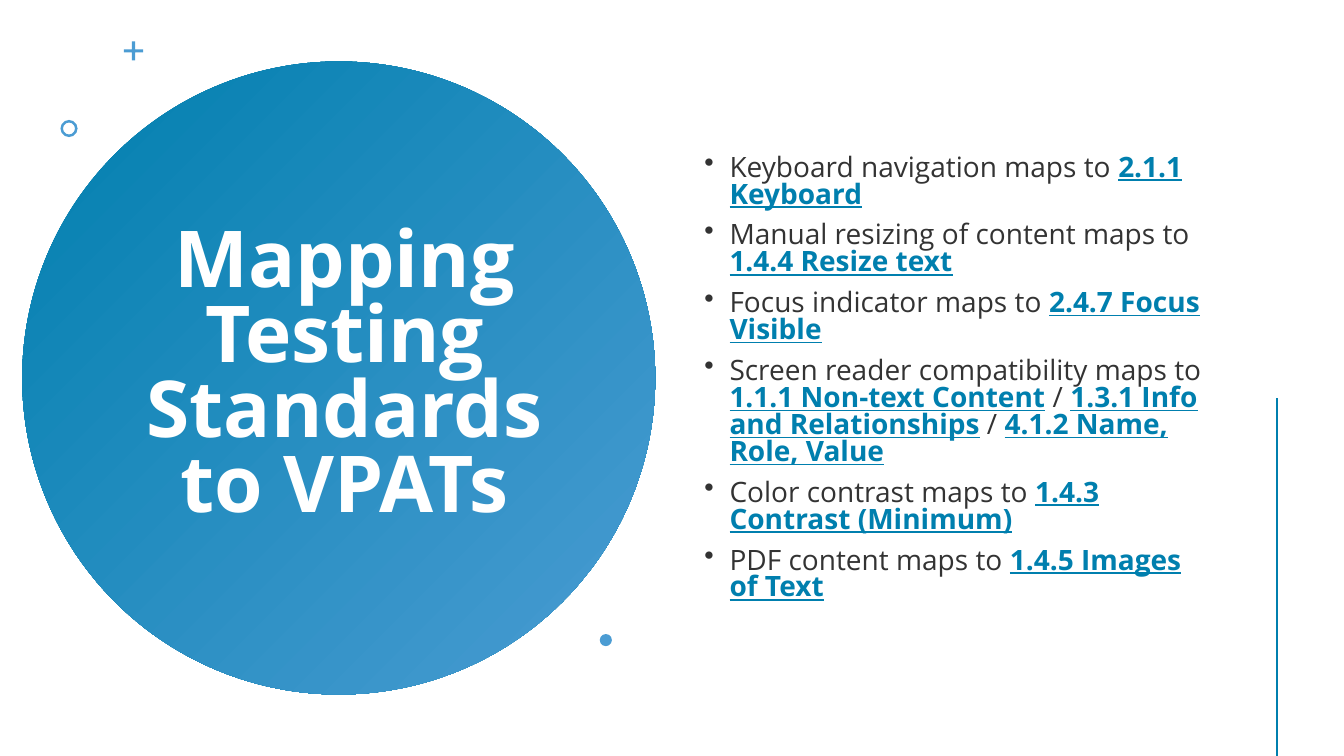
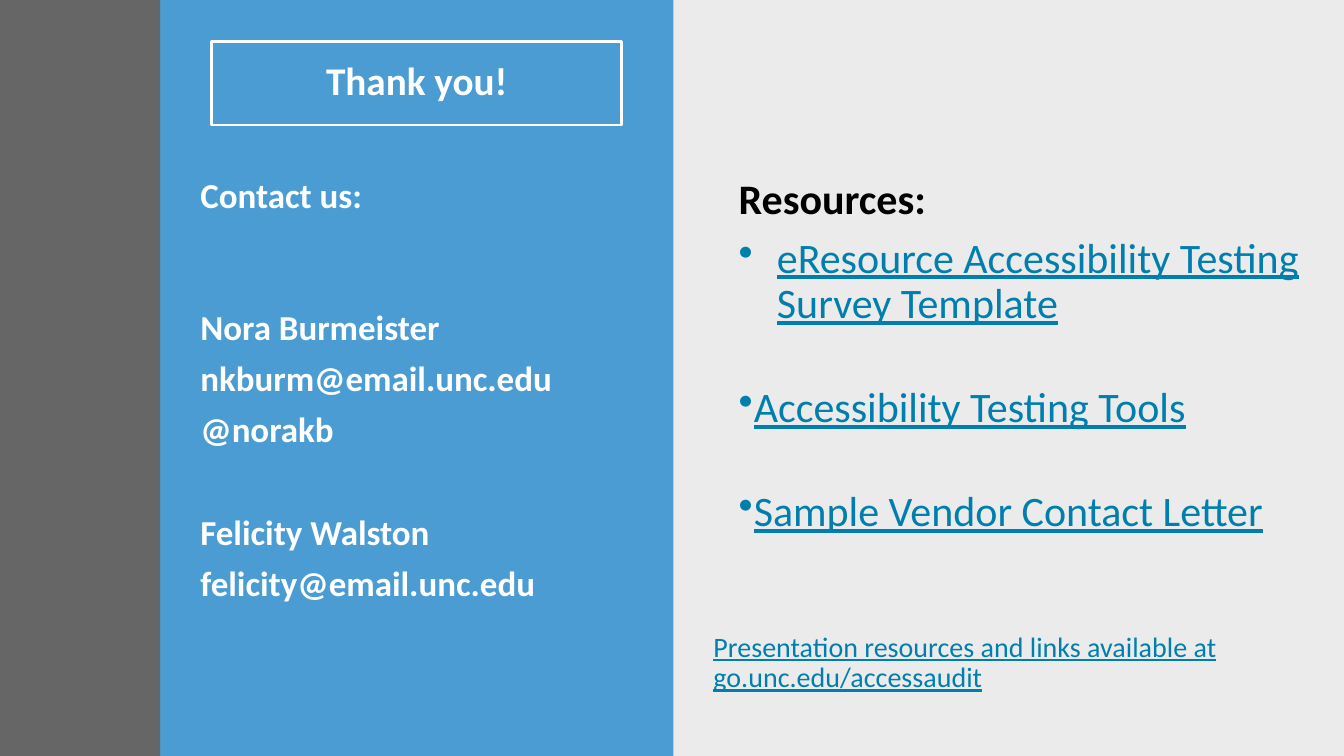
from pptx import Presentation
from pptx.dml.color import RGBColor
from pptx.enum.shapes import MSO_CONNECTOR, MSO_SHAPE
from pptx.enum.text import MSO_ANCHOR, MSO_AUTO_SIZE, PP_ALIGN
from pptx.oxml.ns import qn
from pptx.util import Inches, Pt
from lxml import etree

# Shared style
WHITE = RGBColor(0xFF, 0xFF, 0xFF)
BLACK = RGBColor(0, 0, 0)
INK = RGBColor(0x33, 0x33, 0x33)
GRAY = RGBColor(0x66, 0x66, 0x66)
PALE = RGBColor(0xEB, 0xEB, 0xEB)
SKY = RGBColor(0x4B, 0x9C, 0xD3)
TEAL = RGBColor(0x00, 0x7F, 0xAE)

W, H = Inches(13.333), Inches(7.5)
SLIDE = (0, 0, W, H)

OPEN = dict(name="Open Sans", size=Pt(20))
TITLE_OPEN = dict(name="Open Sans", size=Pt(56), bold=True, color=WHITE)
TITLE_CALIBRI = dict(name="Calibri", size=Pt(28), bold=True, color=WHITE)
CONTACT = dict(name="Calibri", size=Pt(25), bold=True, color=WHITE)
HEADING = dict(name="Calibri", size=Pt(30), bold=True, color=BLACK)
LINK = dict(name="Calibri", size=Pt(30), underline=True, color=TEAL)
PLAIN = dict(OPEN, color=INK)
STANDARD = dict(OPEN, bold=True, underline=True, color=TEAL)

# Slide 1: alternating plain text and standard names
MAPPINGS = [
    ["Keyboard navigation maps to ", "2.1.1 Keyboard"],
    ["Manual resizing of content maps to ", "1.4.4 Resize text"],
    ["Focus indicator maps to ", "2.4.7 Focus Visible"],
    ["Screen reader compatibility maps to ", "1.1.1 Non-text Content", " / ",
     "1.3.1 Info and Relationships", " / ", "4.1.2 Name, Role, Value"],
    ["Color contrast maps to ", "1.4.3 Contrast (Minimum)"],
    ["PDF content maps to ", "1.4.5 Images of Text"],
]

# Slide 2: text and space before
CONTACTS = [
    ("Contact us:", 0), ("Nora Burmeister", 67), ("nkburm@email.unc.edu", 9.5),
    ("@norakb", 9.5), ("Felicity Walston", 47), ("felicity@email.unc.edu", 9.5),
]
# Text, space before and hanging indent
RESOURCES = [
    ("eResource Accessibility Testing Survey Template", 9.5, 0.38),
    ("Accessibility Testing Tools", 42, 0.15),
    ("Sample Vendor Contact Letter", 42, 0.15),
]


def part(box, x, y, w, h):
    """Box inside another one, in percent of its width and height."""
    left, top, width, height = box
    return (int(left + width * x / 100), int(top + height * y / 100),
            int(width * w / 100), int(height * h / 100))


def add_shape(s, kind, box, color):
    sp = s.shapes.add_shape(kind, *box)
    sp.shadow.inherit = False
    sp.fill.solid()
    sp.fill.fore_color.rgb = color
    sp.line.fill.background()
    return sp


def add_text(s, box, anchor=MSO_ANCHOR.TOP):
    tf = s.shapes.add_textbox(*box).text_frame
    tf.word_wrap = True
    tf.vertical_anchor = anchor
    return tf


def add_runs(p, runs):
    for text, style in runs:
        r = p.add_run()
        r.text = text
        for key, value in style.items():
            if key == "color":
                r.font.color.rgb = value
            else:
                setattr(r.font, key, value)


def add_paragraph(tf, runs, before=0, hang=0, spacing=0.9):
    first = not tf.paragraphs[0].runs
    p = tf.paragraphs[0] if first else tf.add_paragraph()
    p.line_spacing = spacing
    p.space_before = Pt(0 if first else before)
    if hang:
        pPr = p._p.get_or_add_pPr()
        pPr.set("marL", str(Inches(hang)))
        pPr.set("indent", str(-Inches(hang)))
        etree.SubElement(pPr, qn("a:buChar")).set("char", "•")
    add_runs(p, runs)


def place_title(s, box, text, style, spacing):
    title = s.shapes.title
    title.left, title.top, title.width, title.height = box
    title.element.getparent().append(title.element)  # in front of the panel
    tf = title.text_frame
    for key, value in dict(word_wrap=True, auto_size=MSO_AUTO_SIZE.NONE,
                           vertical_anchor=MSO_ANCHOR.MIDDLE).items():
        setattr(tf, key, value)
    p = tf.paragraphs[0]
    p.alignment = PP_ALIGN.CENTER
    p.line_spacing = spacing
    add_runs(p, [(text, style)])
    return title


def circle_panel(s, box):
    # Gradient disc with the title
    disc = add_shape(s, MSO_SHAPE.OVAL, part(box, 3.3, 8.13, 94.2, 83.73), TEAL)
    disc.fill.gradient()
    disc.fill.gradient_angle = 315
    for stop, color in zip(disc.fill.gradient_stops, (TEAL, SKY)):
        stop.color.rgb = color
    place_title(s, part(box, 20.25, 18.8, 62.1, 62.27),
                "Mapping Testing Standards to VPATs", TITLE_OPEN, 0.8)
    # Small ornaments
    plus = add_shape(s, MSO_SHAPE.CROSS, part(box, 18.45, 5.47, 2.85, 2.53), SKY)
    plus.adjustments[0] = 0.42
    ring = add_shape(s, MSO_SHAPE.DONUT, part(box, 9, 15.87, 2.55, 2.27), SKY)
    ring.adjustments[0] = 0.15
    add_shape(s, MSO_SHAPE.OVAL, part(box, 89.25, 83.87, 1.8, 1.6), SKY)


def mapping_list(s, box):
    tf = add_text(s, box, MSO_ANCHOR.MIDDLE)
    for pieces in MAPPINGS:
        runs = [(text, STANDARD if i % 2 else PLAIN) for i, text in enumerate(pieces)]
        add_paragraph(tf, runs, before=10, hang=0.25, spacing=0.8)


def edge_line(s, box):
    x, y, _, height = box
    line = s.shapes.add_connector(MSO_CONNECTOR.STRAIGHT, x, y, x, y + height)
    line.line.color.rgb = TEAL
    line.line.width = Pt(2)
    etree.SubElement(line.element.spPr, qn("a:effectLst"))


def contact_panel(s, box):
    add_shape(s, MSO_SHAPE.RECTANGLE, box, SKY)
    title = place_title(s, part(box, 10.02, 5.47, 79.96, 11.07),
                        "Thank you!", TITLE_CALIBRI, 0.9)
    title.line.color.rgb = WHITE
    title.line.width = Pt(2)
    tf = add_text(s, part(box, 5.9, 22.93, 83.9, 69.6))
    for text, before in CONTACTS:
        add_paragraph(tf, [(text, CONTACT)], before)


def resource_panel(s, box):
    add_shape(s, MSO_SHAPE.RECTANGLE, box, PALE)
    tf = add_text(s, part(box, 8.45, 22.93, 91.5, 50))
    add_paragraph(tf, [("Resources:", HEADING)])
    for text, before, hang in RESOURCES:
        add_paragraph(tf, [(text, LINK)], before, hang)
    # Closing link
    tf = add_text(s, part(box, 4.7, 83.07, 93.9, 13))
    add_paragraph(tf, [("Presentation resources and links available at "
                        "go.unc.edu/accessaudit", dict(LINK, size=Pt(20)))])


def mapping_slide(s):
    circle_panel(s, part(SLIDE, 0, 0, 50, 100))
    mapping_list(s, part(SLIDE, 51.67, 7.6, 39.15, 85.07))
    edge_line(s, part(SLIDE, 95.02, 52.67, 0, 47.33))


def thanks_slide(s):
    resource_panel(s, part(SLIDE, 50, 0, 50, 100))
    contact_panel(s, part(SLIDE, 11.92, 0, 38.18, 100))
    add_shape(s, MSO_SHAPE.RECTANGLE, part(SLIDE, 0, 0, 11.92, 100), GRAY)


def main():
    prs = Presentation()
    prs.slide_width, prs.slide_height = W, H
    title_only = prs.slide_layouts[5]
    for build in (mapping_slide, thanks_slide):
        build(prs.slides.add_slide(title_only))
    prs.save("out.pptx")


if __name__ == "__main__":
    main()
